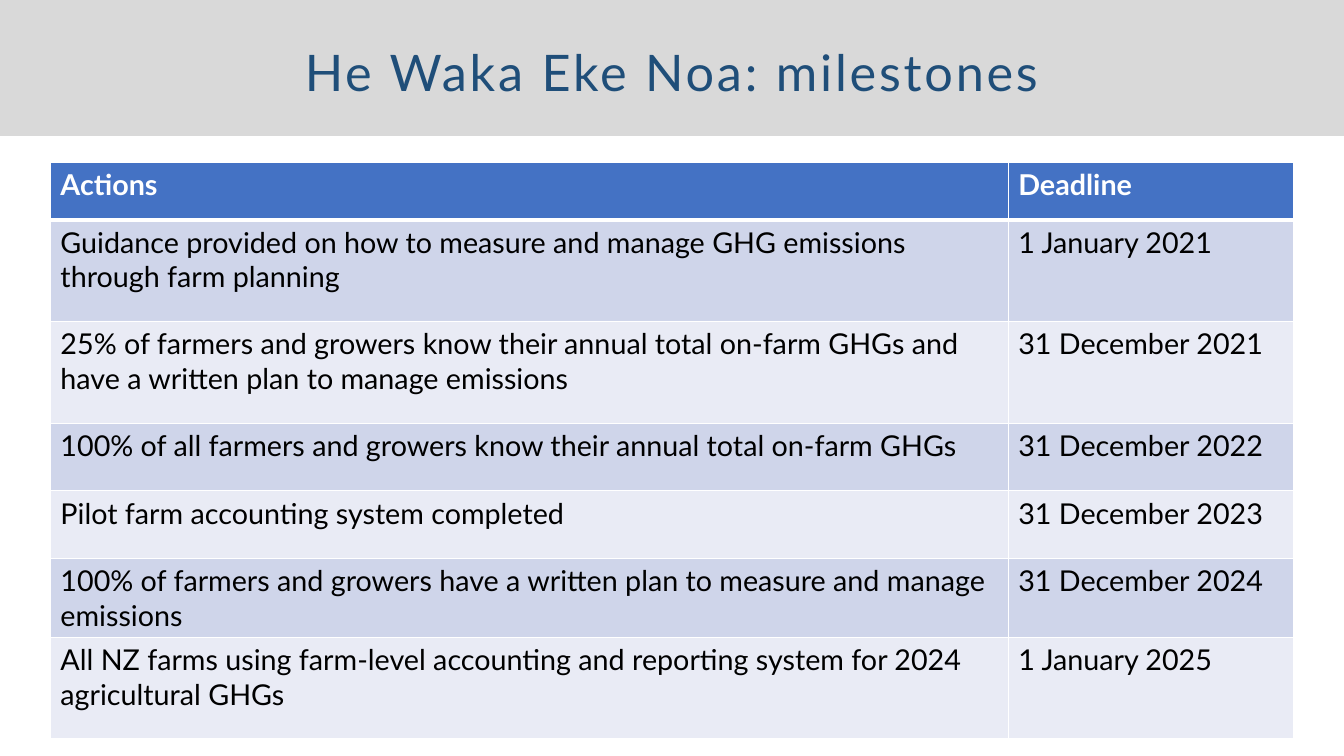
from lxml import etree
from pptx import Presentation
from pptx.dml.color import RGBColor
from pptx.enum.shapes import MSO_SHAPE
from pptx.enum.text import MSO_AUTO_SIZE, PP_ALIGN
from pptx.oxml.ns import qn
from pptx.util import Inches, Pt

RECT = MSO_SHAPE.RECTANGLE
CENTER = PP_ALIGN.CENTER
GROW = MSO_AUTO_SIZE.SHAPE_TO_FIT_TEXT

WHITE = RGBColor(0xFF, 0xFF, 0xFF)
BLACK = RGBColor(0, 0, 0)
GREY = RGBColor(0xD9, 0xD9, 0xD9)
NAVY = RGBColor(0x1F, 0x4E, 0x79)
HEADER = RGBColor(0x44, 0x72, 0xC4)
BANDS = [RGBColor(0xE9, 0xEB, 0xF5), RGBColor(0xCF, 0xD5, 0xEA)]

ROWS = [
    (0.57, "Actions", "Deadline"),
    (1.01, "Guidance provided on how to measure and manage GHG emissions through farm planning",
     "1 January 2021"),
    (1.01, "25% of farmers and growers know their annual total on-farm GHGs and have a written "
     "plan to manage emissions", "31 December 2021"),
    (0.67, "100% of all farmers and growers know their annual total on-farm GHGs",
     "31 December 2022"),
    (0.67, "Pilot farm accounting system completed", "31 December 2023"),
    (0.67, "100% of farmers and growers have a written plan to measure and manage emissions",
     "31 December 2024"),
    (1.01, "All NZ farms using farm-level accounting and reporting system for 2024 "
     "agricultural GHGs", "1 January 2025"),
]
COLUMNS = [9.5, 2.83]


def add_text(p, text, color, **formats):
    r = p.add_run()
    r.text = text
    r.font.color.rgb = color
    for name, value in {"name": "Lato", **formats}.items():
        setattr(r.font, name, value)
    return r


def add_border(cell, position, side, width):
    ln = etree.Element(qn(f"a:ln{side}"), w=str(Pt(width)))
    fill = etree.SubElement(ln, qn("a:solidFill"))
    etree.SubElement(fill, qn("a:srgbClr"), val=str(WHITE))
    cell._tc.get_or_add_tcPr().insert(position, ln)


prs = Presentation()
prs.slide_width, prs.slide_height = Inches(13.33), Inches(7.5)
s = prs.slides.add_slide(prs.slide_layouts[6])

# Grey title band above a white content area
for top, height, color in [(0, 7.5, GREY), (1.35, 6.15, WHITE)]:
    sp = s.shapes.add_shape(RECT, 0, Inches(top), prs.slide_width, Inches(height))
    sp.shadow.inherit = False
    sp.fill.solid()
    sp.fill.fore_color.rgb = color
    sp.line.fill.background()

# Title
tf = s.shapes.add_textbox(0, Inches(0.27), prs.slide_width, Inches(0.75)).text_frame
tf.word_wrap = True
tf.auto_size = GROW
p = tf.paragraphs[0]
p.alignment = CENTER
p.line_spacing = 1.14
r = add_text(p, "He Waka Eke Noa: milestones", NAVY, size=Pt(36))
r.font._element.set("spc", "200")

# Milestone table
table = s.shapes.add_table(len(ROWS), len(COLUMNS), Inches(0.5), Inches(1.61),
                           Inches(sum(COLUMNS)), Inches(sum(row[0] for row in ROWS))).table
for column, width in zip(table.columns, COLUMNS):
    column.width = Inches(width)

for i, (height, *texts) in enumerate(ROWS):
    table.rows[i].height = Inches(height)
    is_header = i == 0
    for j, text in enumerate(texts):
        cell = table.cell(i, j)
        cell.fill.solid()
        cell.fill.fore_color.rgb = HEADER if is_header else BANDS[i % 2]
        add_text(cell.text_frame.paragraphs[0], text, WHITE if is_header else BLACK,
                 size=Pt(20.5), bold=is_header)
        # A thicker line separates the header from the body
        widths = {"L": 1, "R": 1, "T": 3 if i == 1 else 1, "B": 3 if is_header else 1}
        for position, (side, width) in enumerate(widths.items()):
            add_border(cell, position, side, width)

prs.save("out.pptx")
